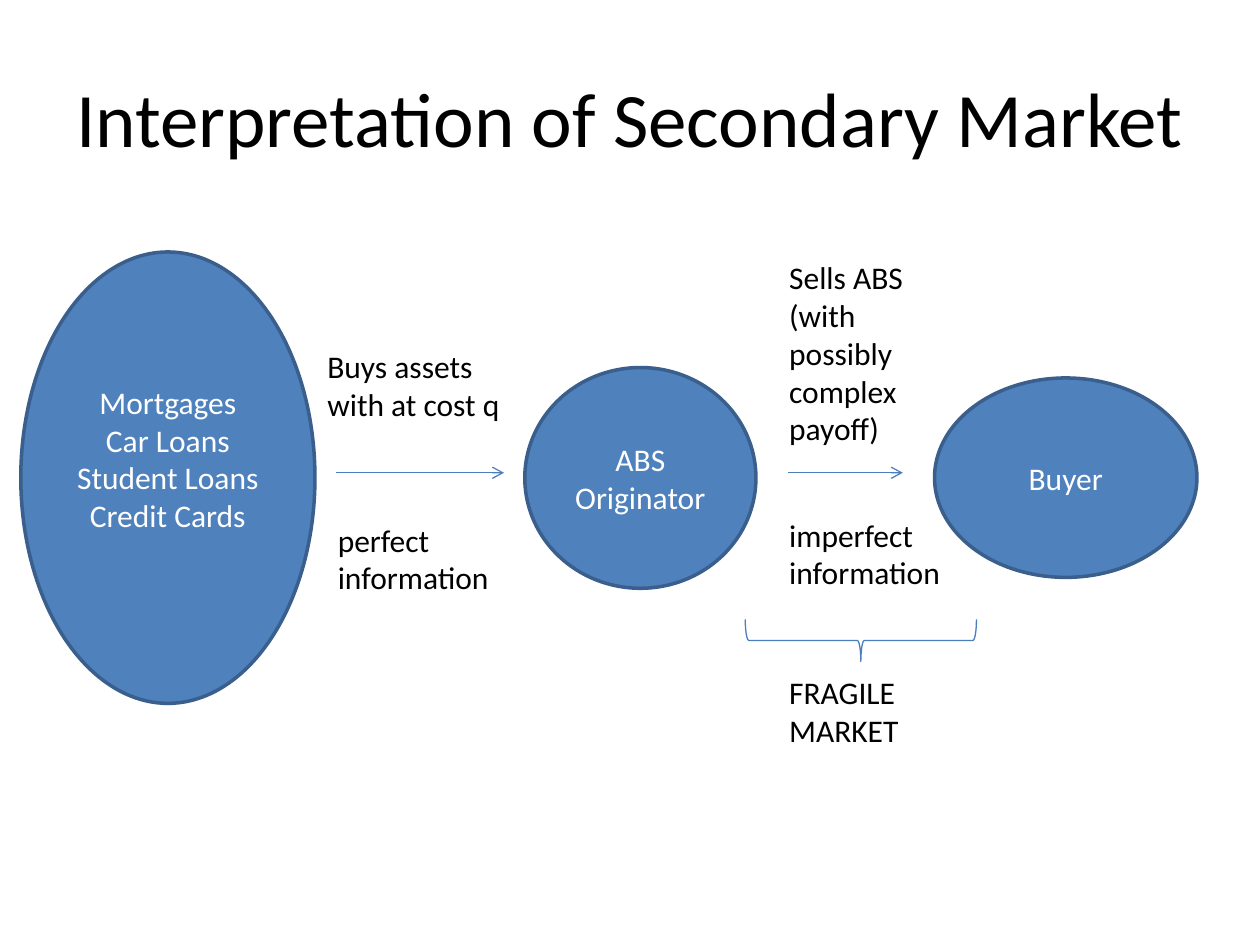
import pptx
import pptx.util
import pptx.dml.color
import pptx.enum.shapes
import pptx.enum.text
import pptx.oxml.ns
import lxml.etree

Cm, Pt = pptx.util.Cm, pptx.util.Pt
SHAPE = pptx.enum.shapes.MSO_SHAPE
ALIGN = pptx.enum.text.PP_ALIGN
ANCHOR = pptx.enum.text.MSO_ANCHOR
qn = pptx.oxml.ns.qn
COLORS = {"text": "000000", "light": "FFFFFF", "fill": "4F81BD",
          "outline": "3A5F8C", "line": "4B7EBC"}


def rgb(name):
    return pptx.dml.color.RGBColor.from_string(COLORS[name])


def add_text(sp, lines, color="text", size=18, align=ALIGN.LEFT, anchor=ANCHOR.TOP):
    tf = sp.text_frame
    tf.word_wrap = True
    tf.vertical_anchor = anchor
    for i, line in enumerate(lines):
        p = tf.add_paragraph() if i else tf.paragraphs[0]
        p.alignment = align
        r = p.add_run()
        r.text = line
        r.font.name = "Calibri"
        r.font.size = Pt(size)
        r.font.color.rgb = rgb(color)


prs = pptx.Presentation()
prs.slide_width, prs.slide_height = Cm(25.4), Cm(19.05)
s = prs.slides.add_slide(prs.slide_layouts[6])

# Title
title = s.shapes.add_textbox(Cm(1.27), Cm(0.76), Cm(22.86), Cm(3.18))
add_text(title, ["Interpretation of Secondary Market"], size=44,
         align=ALIGN.CENTER, anchor=ANCHOR.MIDDLE)

# Market participants; the last value is the bottom inset
participants = [
    (0.42, 5.08, 5.93, 9.1,
     ["Mortgages", "Car Loans", "Student Loans", "Credit Cards"], 0.9),
    (10.58, 7.41, 4.66, 4.45, ["ABS Originator"], 0.13),
    (18.84, 7.62, 5.29, 4.02, ["Buyer"], 0.13),
]
for x, y, w, h, lines, inset in participants:
    sp = s.shapes.add_shape(SHAPE.OVAL, Cm(x), Cm(y), Cm(w), Cm(h))
    sp.shadow.inherit = False
    sp.fill.solid()
    sp.fill.fore_color.rgb = rgb("fill")
    sp.line.color.rgb = rgb("outline")
    sp.line.width = Pt(2)
    sp.text_frame.margin_bottom = Cm(inset)
    add_text(sp, lines, "light", align=ALIGN.CENTER, anchor=ANCHOR.MIDDLE)

# Arrows between participants
for x1, x2 in [(6.78, 10.16), (15.88, 18.2)]:
    arrow = s.shapes.add_connector(pptx.enum.shapes.MSO_CONNECTOR.STRAIGHT,
                                   Cm(x1), Cm(9.53), Cm(x2), Cm(9.53))
    arrow.line.color.rgb = rgb("line")
    arrow.line.width = Pt(0.75)
    lxml.etree.SubElement(arrow.line._get_or_add_ln(), qn("a:tailEnd"), type="arrow")
    lxml.etree.SubElement(arrow._element.spPr, qn("a:effectLst"))

# Labels around the arrows
labels = [
    (6.35, 6.88, 4.6, 1.8, "Buys assets with at cost q"),
    (6.56, 10.37, 3.81, 1.8, "perfect information"),
    (15.66, 5.08, 3.95, 4.11, "Sells ABS (with possibly complex payoff)"),
    (15.66, 10.27, 3.81, 1.8, "imperfect information"),
    (15.66, 13.44, 3.81, 1.8, "FRAGILE MARKET"),
]
for x, y, w, h, text in labels:
    sp = s.shapes.add_textbox(Cm(x), Cm(y), Cm(w), Cm(h))
    add_text(sp, [text])

# Brace over the fragile market, turned to point down
brace = s.shapes.add_shape(SHAPE.LEFT_BRACE, Cm(16.93), Cm(10.58), Cm(0.85), Cm(4.66))
brace.rotation = 270
brace.shadow.inherit = False
brace.fill.background()
brace.line.color.rgb = rgb("line")
brace.line.width = Pt(0.75)

prs.save("out.pptx")
